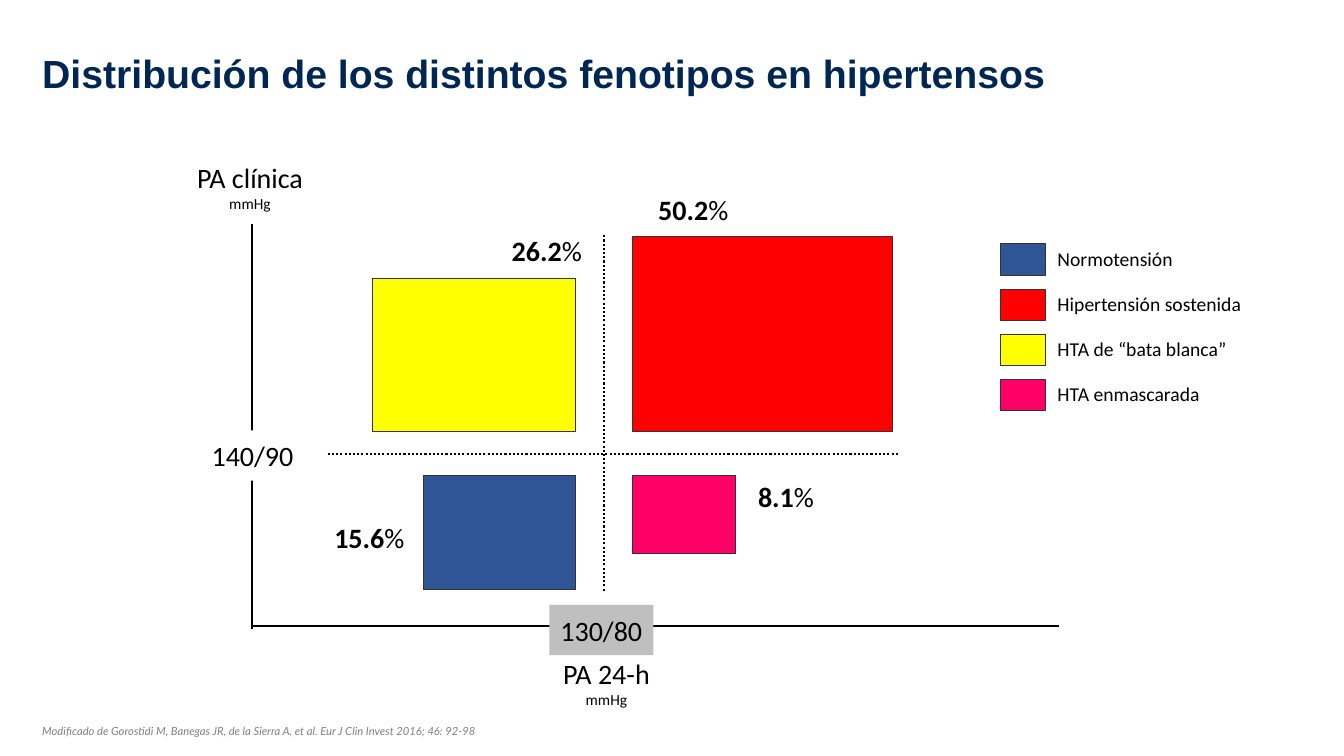
from dataclasses import dataclass

import lxml.etree
import pptx
import pptx.dml.color
import pptx.enum.dml
import pptx.enum.shapes
import pptx.enum.text
import pptx.oxml.ns
import pptx.util

Inches = pptx.util.Inches
ALIGN = pptx.enum.text.PP_ALIGN
ANCHOR = pptx.enum.text.MSO_ANCHOR


@dataclass(frozen=True)
class Theme:
    ink: str = "000000"
    title: str = "002754"
    source: str = "808080"
    outline: str = "333333"
    paper: str = "FFFFFF"
    threshold: str = "BFBFBF"
    normal: str = "2F5597"
    sustained: str = "FF0000"
    white_coat: str = "FFFF00"
    masked: str = "FF0066"
    body_font: str = "Calibri"
    title_font: str = "Arial"
    source_font: str = "Lato"
    title_size: int = 28
    label_size: int = 20
    legend_size: int = 14
    unit_size: int = 11
    source_size: int = 8


T = Theme()

LEGEND = [
    ("Normotensión", T.normal),
    ("Hipertensión sostenida", T.sustained),
    ("HTA de “bata blanca”", T.white_coat),
    ("HTA enmascarada", T.masked),
]

# share, colour, width, horizontal side, vertical side,
# then the label's box (left, top, width) from the crossing point
PHENOTYPES = [
    ("26.2", T.white_coat, 2.02, -1, -1, (-1.66, -2.23, 1.54)),
    ("50.2", T.sustained, 2.58, 1, -1, (0.44, -2.64, 1.1)),
    ("15.6", T.normal, 1.51, -1, 1, (-3.55, 0.61, 1.67)),
    ("8.1", T.masked, 1.03, 1, 1, (1.43, 0.21, 0.92)),
]


def rgb(code):
    return pptx.dml.color.RGBColor.from_string(code)


def style(font, size, name=T.body_font, color=T.ink):
    font.size = pptx.util.Pt(size)
    font.name = name
    font.color.rgb = rgb(color)


def add_text(slide, box, align=ALIGN.LEFT, inset=(0.1, 0.05), wrap=False,
             anchor=ANCHOR.TOP):
    """Add an empty text box and return its text frame."""
    tf = slide.shapes.add_textbox(*map(Inches, box)).text_frame
    tf.word_wrap = wrap
    tf.vertical_anchor = anchor
    tf.margin_left = tf.margin_right = Inches(inset[0])
    tf.margin_top = tf.margin_bottom = Inches(inset[1])
    tf.paragraphs[0].alignment = align
    return tf


def add_block(slide, box, fill, outline=T.outline):
    sp = slide.shapes.add_shape(pptx.enum.shapes.MSO_SHAPE.RECTANGLE, *map(Inches, box))
    sp.shadow.inherit = False
    sp.fill.solid()
    sp.fill.fore_color.rgb = rgb(fill)
    if outline:
        sp.line.color.rgb = rgb(outline)
        sp.line.width = pptx.util.Pt(0.75)
    else:
        sp.line.fill.background()
    return sp


def add_line(slide, x1, y1, x2, y2, dotted=False):
    line = slide.shapes.add_connector(
        pptx.enum.shapes.MSO_CONNECTOR.STRAIGHT, *map(Inches, (x1, y1, x2, y2)))
    line.line.color.rgb = rgb(T.ink)
    line.line.width = pptx.util.Pt(1.5)
    if dotted:
        line.line.dash_style = pptx.enum.dml.MSO_LINE.ROUND_DOT
    lxml.etree.SubElement(line._element.spPr, pptx.oxml.ns.qn("a:effectLst"))


def add_axis_name(slide, box, name):
    tf = add_text(slide, box, ALIGN.CENTER, inset=(0, 0))
    p = tf.paragraphs[0]
    p.text = name
    style(p.font, T.label_size)
    p = tf.add_paragraph()
    p.text = "mmHg"
    p.alignment = ALIGN.CENTER
    style(p.font, T.unit_size)


def add_threshold(slide, box, value, fill):
    sp = add_block(slide, box, fill, outline=None)
    tf = sp.text_frame
    tf.word_wrap = False
    tf.margin_left = tf.margin_right = 0
    tf.margin_top = tf.margin_bottom = Inches(0.08)
    p = tf.paragraphs[0]
    p.text = value
    p.alignment = ALIGN.CENTER
    style(p.font, T.label_size)


def add_axes(slide, box):
    left, top, width, height = box
    bottom = top + height
    add_line(slide, left, bottom + 0.03, left, top)
    add_line(slide, left, bottom, left + width, bottom)
    add_axis_name(slide, (left - 0.6, top - 0.63, 1.16, 0.52), "PA clínica")
    add_axis_name(slide, (left + 3.03, bottom + 0.3, 0.97, 0.52), "PA 24-h")
    add_threshold(slide, (left - 0.43, top + 2.05, 0.87, 0.5), "140/90", T.paper)
    add_threshold(slide, (left + 2.95, bottom - 0.21, 1.03, 0.5), "130/80", T.threshold)


def add_quadrants(slide, box):
    """Place each phenotype's block outward from the crossing of the thresholds."""
    left, top, width, height = box
    x, y = left + 3.49, top + 2.28
    gap_x, gap_y = 0.28, 0.22
    add_line(slide, x, top + height - 0.35, x, top + 0.1, dotted=True)
    add_line(slide, left + 0.75, y, left + 6.42, y, dotted=True)
    for share, fill, w, side_x, side_y, (dx, dy, label_w) in PHENOTYPES:
        h = 0.75 * w
        block_x = x + gap_x if side_x > 0 else x - gap_x - w
        block_y = y + gap_y if side_y > 0 else y - gap_y - h
        add_block(slide, (block_x, block_y, w, h), fill)
        align = ALIGN.LEFT if side_x > 0 else ALIGN.RIGHT
        tf = add_text(slide, (x + dx, y + dy, label_w, 0.43), align)
        tf.word_wrap = True
        p = tf.paragraphs[0]
        style(p.font, T.label_size)
        r = p.add_run()
        r.text = share
        r.font.bold = True
        p.add_run().text = "%"


def add_legend(slide, box):
    left, top, width, height = box
    pitch = height / len(LEGEND)
    for i, (name, fill) in enumerate(LEGEND):
        y = top + i * pitch
        add_block(slide, (left, y, 0.45, 0.31), fill)
        tf = add_text(slide, (left + 0.47, y - 0.02, width - 0.47, 0.34), wrap=True)
        p = tf.paragraphs[0]
        p.text = name
        style(p.font, T.legend_size)


def add_title(slide, box):
    p = add_text(slide, box, wrap=True, anchor=ANCHOR.MIDDLE).paragraphs[0]
    p.text = "Distribución de los distintos fenotipos en hipertensos"
    p.line_spacing = 0.9
    style(p.font, T.title_size, T.title_font, T.title)
    p.font.bold = True


def add_source(slide, box):
    p = add_text(slide, box).paragraphs[0]
    p.text = ("Modificado de Gorostidi M, Banegas JR, de la Sierra A, et al. "
              "Eur J Clin Invest 2016; 46: 92-98")
    style(p.font, T.source_size, T.source_font, T.source)
    p.font.italic = True


def main():
    prs = pptx.Presentation()
    prs.slide_width, prs.slide_height = Inches(13.33), Inches(7.5)
    slide = prs.slides.add_slide(prs.slide_layouts[6])
    plot = (2.5, 2.22, 8, 3.99)
    add_title(slide, (0.32, 0.13, 12.61, 1.25))
    add_axes(slide, plot)
    add_quadrants(slide, plot)
    add_legend(slide, (9.92, 2.42, 3.2, 1.79))
    add_source(slide, (0.32, 7.14, 4.9, 0.24))
    prs.save("out.pptx")


if __name__ == "__main__":
    main()
